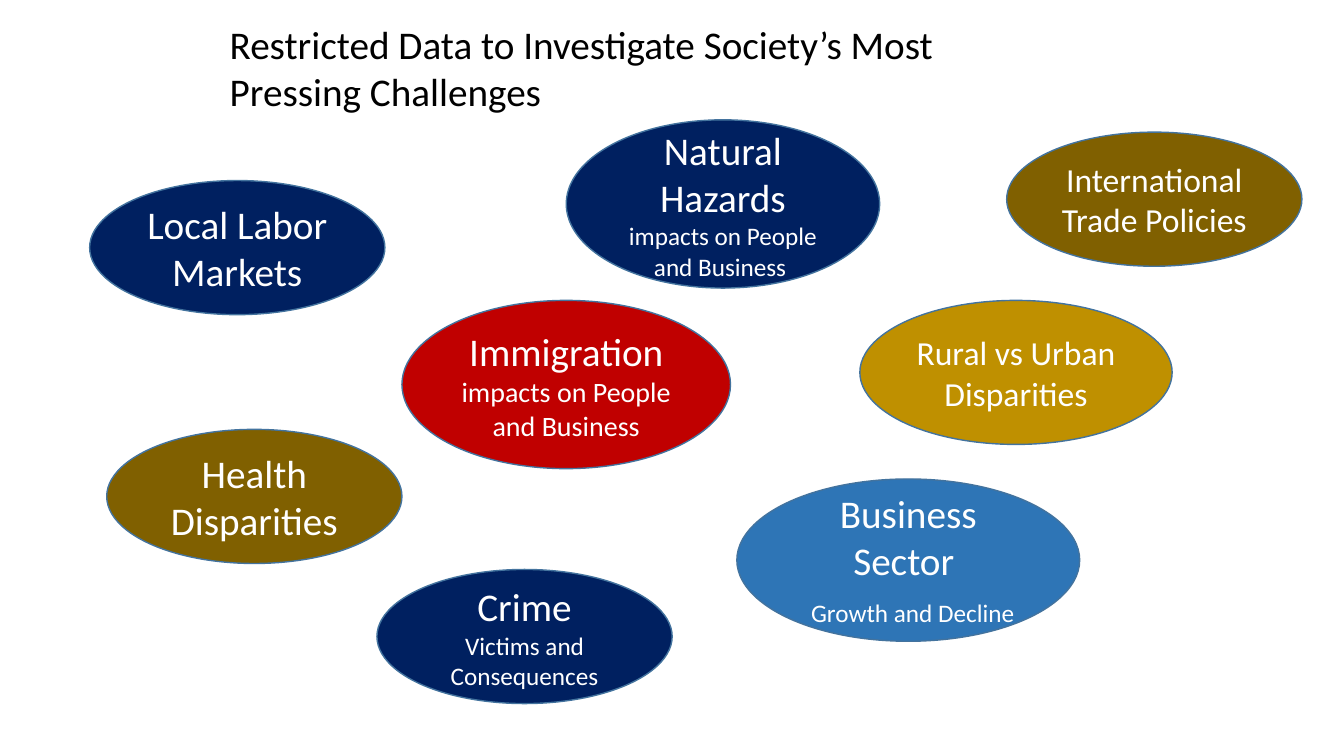
from pptx import Presentation
from pptx.dml.color import RGBColor
from pptx.enum.shapes import MSO_SHAPE as Shape
from pptx.enum.text import MSO_ANCHOR as Anchor, PP_ALIGN as Align
from pptx.util import Cm, Pt

THEME = {
    "font": "Calibri",
    "ink": "000000", "white": "FFFFFF", "outline": "43739E",
    "navy": "002060", "red": "C00000", "brown": "806000",
    "gold": "BF9000", "blue": "2E75B6",
    "large": 28, "medium": 24, "detail": 20, "small": 18,
}

TITLE = "Restricted Data to Investigate Society’s Most Pressing Challenges"
TITLE_BOX = (5.54, 0.38, 21.26, 2.64)

STANDARD = (7.44, 3.38)

# (left, top), (width, height), fill, paragraphs of (text, size) runs; lengths in cm
CHALLENGES = [
    ((2.69, 10.82), STANDARD, "brown", [[("Health Disparities", "large")]]),
    ((10.13, 7.57), (8.28, 4.24), "red",
     [[("Immigration", "large")], [("impacts on People and Business", "detail")]]),
    ((25.37, 3.33), STANDARD, "brown", [[("International Trade Policies", "medium")]]),
    ((2.26, 4.55), STANDARD, "navy", [[("Local Labor Markets", "large")]]),
    ((14.27, 3.02), (7.9, 4.24), "navy",
     [[("Natural Hazards", "large"), (" impacts on People and Business ", "small")]]),
    ((21.67, 7.57), (7.87, 3.63), "gold", [[("Rural vs Urban Disparities", "medium")]]),
    ((18.57, 12.07), (8.64, 4.09), "blue",
     [[("Business Sector ", "large")], [(" ", "large"), ("Growth and Decline", "small")]]),
    ((9.5, 14.35), STANDARD, "navy",
     [[("Crime", "large")], [("Victims and Consequences", "small")]]),
]


def color(name):
    return RGBColor.from_string(THEME[name])


def write(frame, paragraphs, ink="white", align=Align.CENTER, anchor=Anchor.MIDDLE):
    frame.word_wrap = True
    frame.vertical_anchor = anchor
    for index, runs in enumerate(paragraphs):
        paragraph = frame.add_paragraph() if index else frame.paragraphs[0]
        paragraph.alignment = align
        for text, size in runs:
            run = paragraph.add_run()
            run.text = text
            run.font.name = THEME["font"]
            run.font.size = Pt(THEME[size])
            run.font.color.rgb = color(ink)


def add_challenge(slide, position, size, fill, paragraphs):
    oval = slide.shapes.add_shape(Shape.OVAL, *map(Cm, position + size))
    oval.shadow.inherit = False
    oval.fill.solid()
    oval.fill.fore_color.rgb = color(fill)
    oval.line.color.rgb = color("outline")
    oval.line.width = Pt(1)
    write(oval.text_frame, paragraphs)


def main():
    deck = Presentation()
    deck.slide_width, deck.slide_height = Cm(33.87), Cm(19.05)
    slide = deck.slides.add_slide(deck.slide_layouts[6])

    title = slide.shapes.add_textbox(*map(Cm, TITLE_BOX))
    write(title.text_frame, [[(TITLE, "large")]],
          ink="ink", align=Align.LEFT, anchor=Anchor.TOP)
    for challenge in CHALLENGES:
        add_challenge(slide, *challenge)

    deck.save("out.pptx")


if __name__ == "__main__":
    main()
